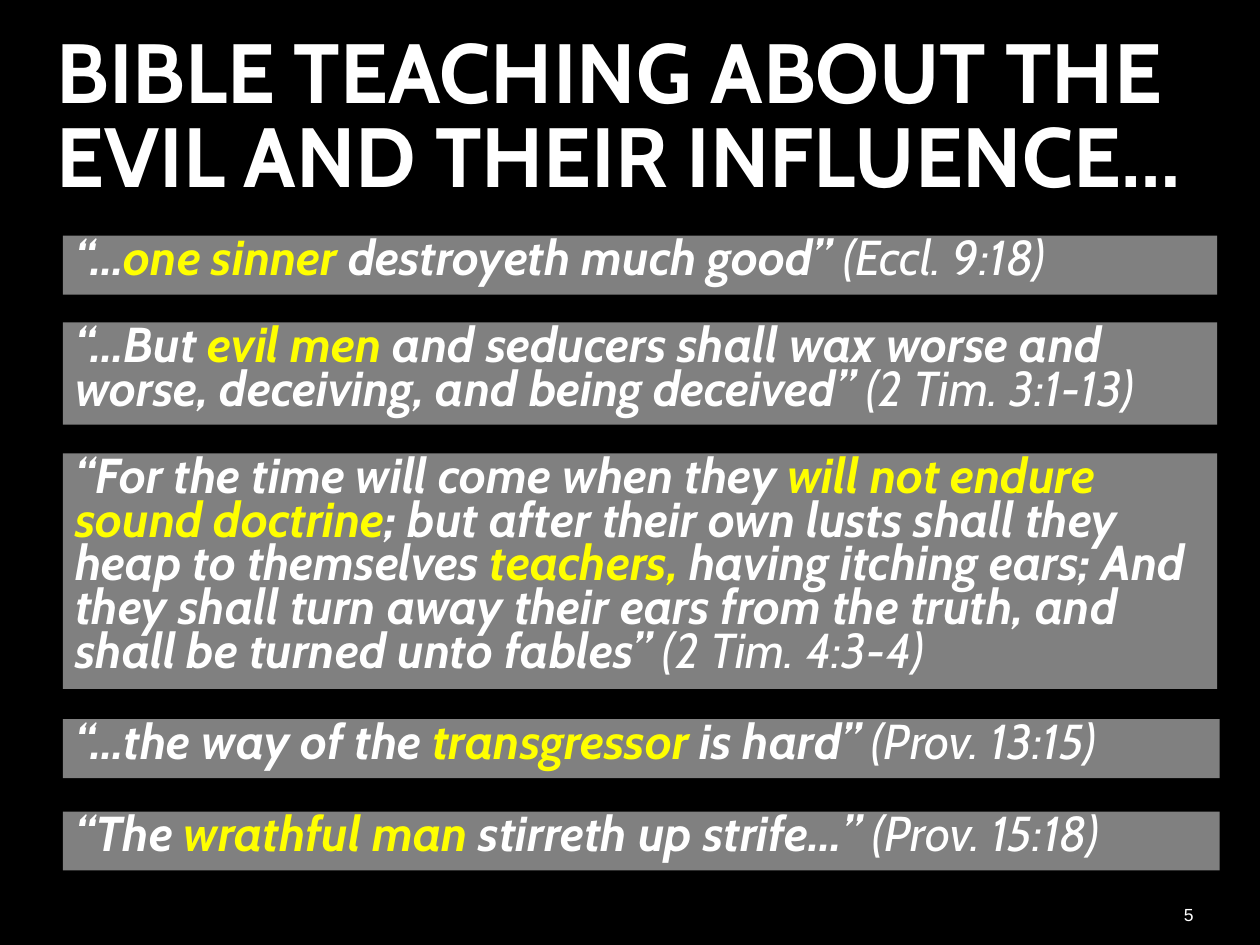
"""Build the slide of Bible verses about evil and its influence."""
from dataclasses import dataclass

from pptx import Presentation
from pptx.dml.color import RGBColor as RGB
from pptx.enum.shapes import MSO_SHAPE as Kind
from pptx.enum.text import MSO_ANCHOR as Anchor, MSO_AUTO_SIZE as Fit, PP_ALIGN as Align
from pptx.slide import Slide
from pptx.util import Cm, Pt


@dataclass(frozen=True)
class Theme:
    back: RGB = RGB(0, 0, 0)
    panel: RGB = RGB(128, 128, 128)
    text: RGB = RGB(255, 255, 255)
    accent: RGB = RGB(255, 255, 0)
    face: str = "Cabin"
    plain: str = "Arial"
    title: Pt = Pt(48)
    body: Pt = Pt(28)
    small: Pt = Pt(10)
    lead: Pt = Pt(25)


@dataclass(frozen=True)
class Verse:
    """Quote pieces alternate between plain and accent colour."""
    top: float
    wide: float
    high: float
    quote: tuple[str, ...]
    cite: str


@dataclass(frozen=True)
class Label:
    box: tuple[float, float, float, float]
    text: str
    face: str
    size: Pt
    bold: bool = False
    lead: Pt | None = None
    align: Align = Align.LEFT


THEME = Theme()
LEFT = 1.27
VERSES = (
    Verse(4.75, 23.27, 1.19,
          ("“…", "one sinner ", "destroyeth much good” "), "(Eccl. 9:18)"),
    Verse(6.5, 23.27, 2.06,
          ("“…But ", "evil men ",
           "and seducers shall wax worse and worse, deceiving, and being deceived” "),
          "(2 Tim. 3:1-13)"),
    Verse(9.14, 23.27, 4.75,
          ("“For the time will come when they ", "will not endure sound doctrine",
           "; but after their own lusts shall they heap to themselves ", "teachers,",
           " having itching ears; And they shall turn away their ears from the truth, "
           "and shall be turned unto fables” "),
          "(2 Tim. 4:3-4)"),
    Verse(14.5, 23.32, 1.19,
          ("“…the way of the ", "transgressor ", "is hard” "), "(Prov. 13:15)"),
    Verse(16.36, 23.32, 1.19,
          ("“The ", "wrathful man ", "stirreth up strife…” "), "(Prov. 15:18)"),
)
LABELS = (
    Label((0.89, 0.76, 24.36, 3.33), "BIBLE TEACHING ABOUT THE EVIL AND THEIR INFLUENCE…",
          THEME.face, THEME.title, True, THEME.title),
    Label((22.91, 17.83, 1.4, 1.22), "5", THEME.plain, THEME.small, align=Align.RIGHT),
)


def add_label(slide: Slide, label: Label) -> None:
    """Write one line of text in a middle-anchored box."""
    frame = slide.shapes.add_textbox(*map(Cm, label.box)).text_frame
    frame.word_wrap = True
    frame.vertical_anchor = Anchor.MIDDLE
    para = frame.paragraphs[0]
    para.text = label.text
    para.alignment = label.align
    para.line_spacing = label.lead
    font = para.font
    font.name, font.size, font.bold = label.face, label.size, label.bold
    font.color.rgb = THEME.text


def add_verse(slide: Slide, verse: Verse) -> None:
    """Draw a grey panel with a quote and its reference."""
    box = Cm(LEFT), Cm(verse.top), Cm(verse.wide), Cm(verse.high)
    shape = slide.shapes.add_shape(Kind.RECTANGLE, *box)
    shape.shadow.inherit = False
    shape.fill.solid()
    shape.fill.fore_color.rgb = THEME.panel
    shape.line.fill.background()
    frame = shape.text_frame
    frame.word_wrap = True
    frame.auto_size = Fit.SHAPE_TO_FIT_TEXT
    frame.vertical_anchor = Anchor.TOP
    para = frame.paragraphs[0]
    para.alignment = Align.LEFT
    para.line_spacing = THEME.lead
    font = para.font
    font.name, font.size, font.italic = THEME.face, THEME.body, True
    for place, text in enumerate((*verse.quote, verse.cite)):
        run = para.add_run()
        run.text = text
        quoted = place < len(verse.quote)
        run.font.bold = quoted
        accent = quoted and place % 2 == 1
        run.font.color.rgb = THEME.accent if accent else THEME.text


def main() -> None:
    """Build and save the deck."""
    deck = Presentation()
    deck.slide_width, deck.slide_height = Cm(25.4), Cm(19.05)
    slide = deck.slides.add_slide(deck.slide_layouts[6])
    fill = slide.background.fill
    fill.solid()
    fill.fore_color.rgb = THEME.back
    for label in LABELS:
        add_label(slide, label)
    for verse in VERSES:
        add_verse(slide, verse)
    deck.save("out.pptx")


if __name__ == "__main__":
    main()
